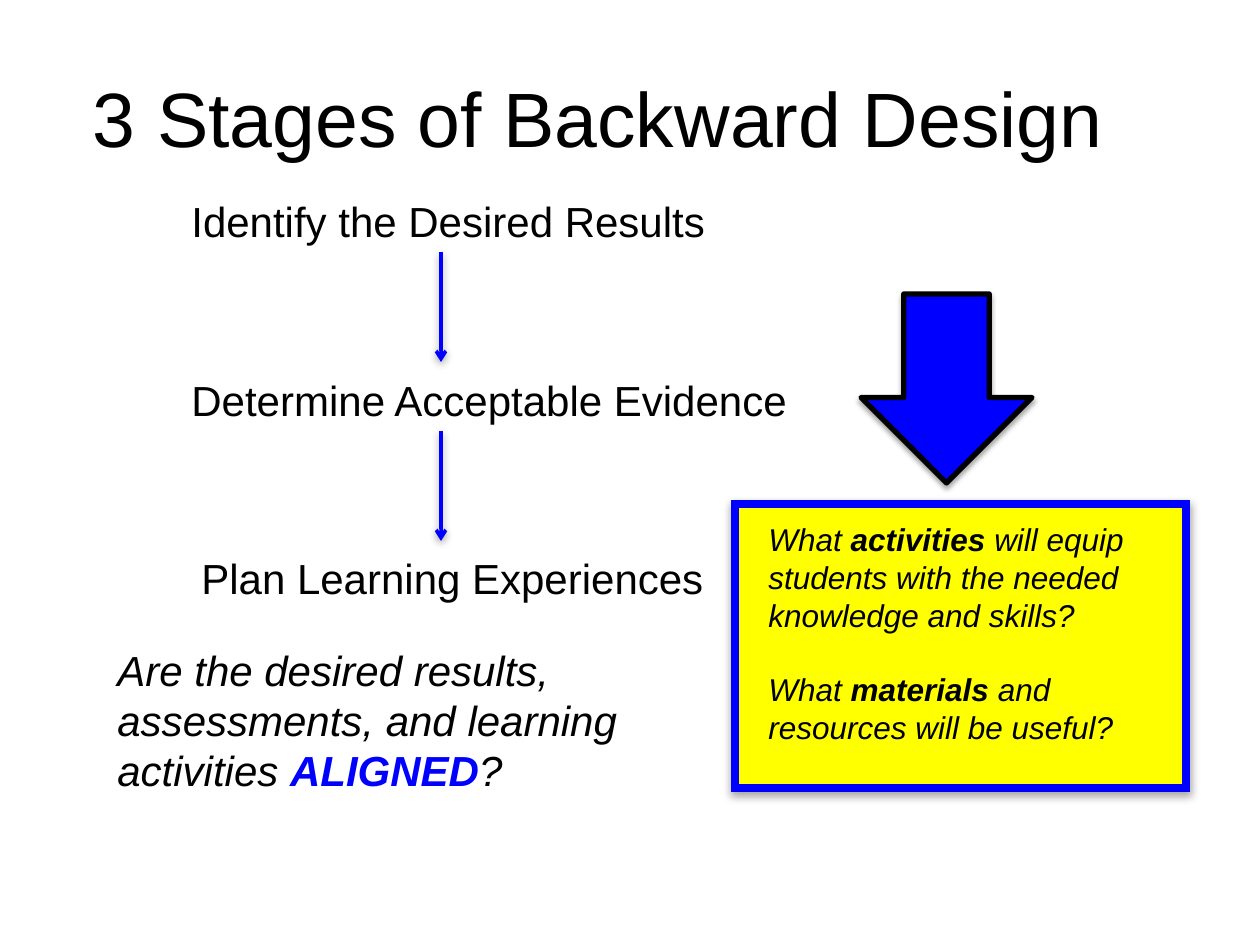
from dataclasses import dataclass

from lxml.etree import SubElement
from pptx import Presentation
from pptx.dml.color import RGBColor
from pptx.enum.shapes import MSO_CONNECTOR as Line, MSO_SHAPE as Shape
from pptx.enum.text import MSO_ANCHOR as Anchor, PP_ALIGN as Align
from pptx.oxml import parse_xml
from pptx.oxml.ns import nsdecls, qn
from pptx.util import Emu, Pt

EMU_PER_PX = 914400 / 126


def px(n):
    return Emu(round(n * EMU_PER_PX))


@dataclass(frozen=True)
class Theme:
    font: str = "Arial"
    black: RGBColor = RGBColor(0, 0, 0)
    blue: RGBColor = RGBColor(0, 0, 255)
    yellow: RGBColor = RGBColor(255, 255, 0)
    title: int = 44
    body: int = 24
    detail: int = 18


class SlideBuilder:
    def __init__(self, prs, theme):
        self.theme = theme
        self.slide = prs.slides.add_slide(prs.slide_layouts[6])

    def text(self, box, paragraphs, size, italic=False, gap=0,
             align=Align.LEFT, anchor=Anchor.TOP):
        """Each paragraph is a list of (text, bold, colour) runs."""
        tf = self.slide.shapes.add_textbox(*map(px, box)).text_frame
        tf.word_wrap = True
        tf.vertical_anchor = anchor
        for i, runs in enumerate(paragraphs):
            p = tf.add_paragraph() if i else tf.paragraphs[0]
            p.alignment = align
            p.space_before = Pt(gap if i else 0)
            p.font.name, p.font.size = self.theme.font, Pt(size)
            p.font.italic = italic
            for words, bold, color in runs:
                r = p.add_run()
                r.text = words
                r.font.bold = bold
                r.font.color.rgb = color

    def shape(self, kind, box, fill, line, width, blur, mitred=False):
        sp = self.slide.shapes.add_shape(kind, *map(px, box))
        sp.fill.solid()
        sp.fill.fore_color.rgb = fill
        ln = self.outline(sp, line, width)
        if mitred:
            SubElement(ln, qn("a:miter"), lim="800000")
        self.shadow(sp, blur, 1.8, 35)

    def arrow(self, x, top, bottom):
        sp = self.slide.shapes.add_connector(
            Line.STRAIGHT, px(x), px(top), px(x), px(bottom))
        ln = self.outline(sp, self.theme.blue, 2)
        SubElement(ln, qn("a:tailEnd"), type="arrow")
        self.shadow(sp, 5, 1.6, 38)

    def outline(self, sp, color, width):
        sp.line.color.rgb = color
        sp.line.width = Pt(width)
        return sp.line._get_or_add_ln()

    def shadow(self, sp, blur, distance, opacity):
        """Add a soft shadow that falls straight down; call after outline."""
        sp._element.spPr.append(parse_xml(
            f'<a:effectLst {nsdecls("a")}>'
            f'<a:outerShdw blurRad="{Pt(blur)}" dist="{Pt(distance)}" '
            'dir="5400000" rotWithShape="0"><a:srgbClr val="000000">'
            f'<a:alpha val="{opacity * 1000}"/></a:srgbClr>'
            '</a:outerShdw></a:effectLst>'))


def main():
    prs = Presentation()
    prs.slide_width, prs.slide_height = px(1260), px(945)
    theme = Theme()
    s = SlideBuilder(prs, theme)

    def plain(words):
        return words, False, theme.black

    def strong(words, color=theme.black):
        return words, True, color

    s.text((0, 38, 1197, 157), [[plain("3 Stages of Backward Design")]],
           theme.title, align=Align.CENTER, anchor=Anchor.MIDDLE)
    s.text((105, 638, 546, 165),
           [[plain("Are the desired results, assessments, and learning activities "),
             strong("ALIGNED", theme.blue), plain("?")]],
           theme.body, italic=True)

    stages = [
        (179, 189, 723, "Identify the Desired Results"),
        (179, 368, 765, "Determine Acceptable Evidence"),
        (189, 546, 707, "Plan Learning Experiences"),
    ]
    for left, top, width, words in stages:
        s.text((left, top, width, 63), [[plain(words)]], theme.body)
    for _, top, _, _ in stages[:-1]:
        s.arrow(441, top + 63, top + 173)

    s.shape(Shape.RECTANGLE, (735, 504, 451, 284), theme.yellow,
            theme.blue, 5, blur=5, mitred=True)
    s.text((756, 514, 410, 242),
           [[plain("What "), strong("activities"),
             plain(" will equip students with the needed knowledge and skills?")],
            [plain("What "), strong("materials"),
             plain(" and resources will be useful?")]],
           theme.detail, italic=True, gap=21)
    s.shape(Shape.DOWN_ARROW, (861, 294, 171, 189), theme.blue,
            theme.black, 3, blur=3.1)

    prs.save("out.pptx")


if __name__ == "__main__":
    main()
